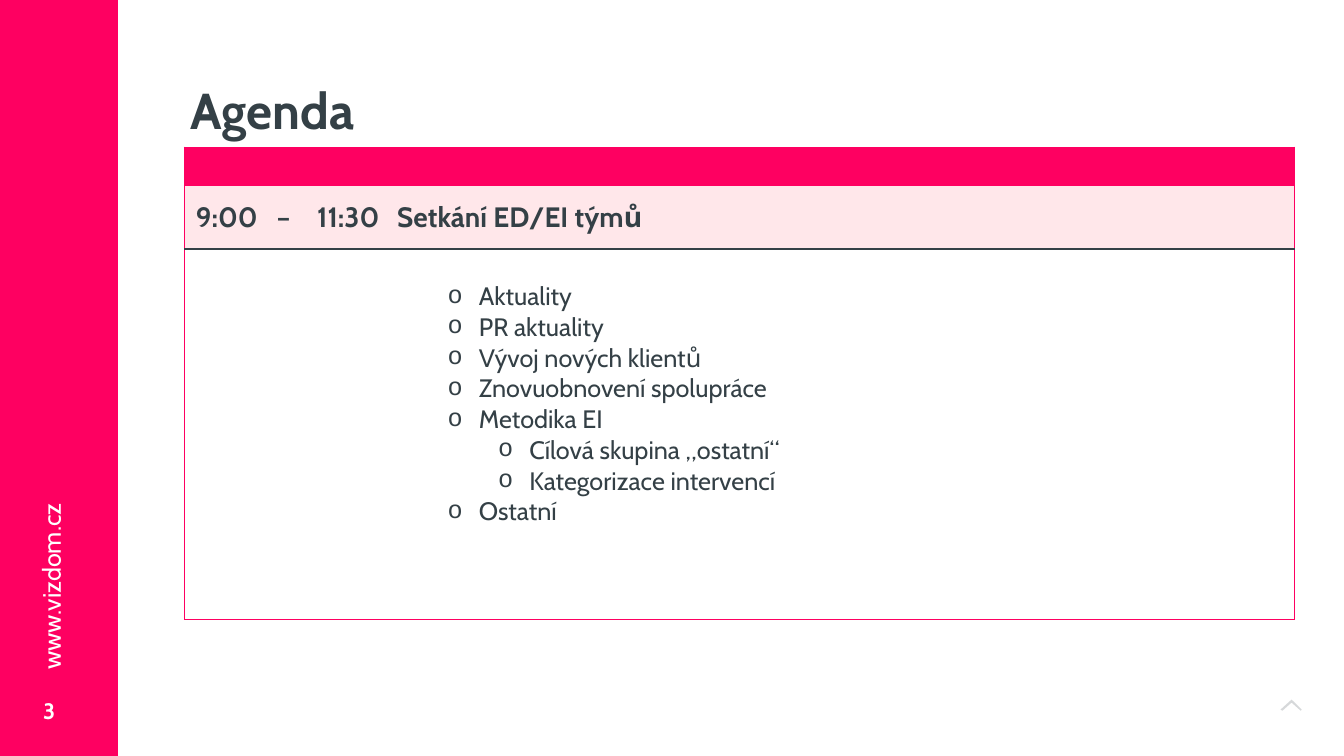
import pptx
import pptx.dml.color
import pptx.enum.shapes
import pptx.enum.text
import pptx.oxml
import pptx.oxml.ns
import pptx.util

FONT = "Cabin"
PINK, PALE, DARK, WHITE = "FE0061", "FFE7EA", "344046", "FFFFFF"

TITLE = "Agenda"
WEBSITE = "www.vizdom.cz"
PAGE_NUMBER = "3"
SESSION = ["9:00", "– ", "11:30", "Setkání ED/EI týmů"]
TOPICS = [
    (1, "Aktuality"),
    (1, "PR aktuality"),
    (1, "Vývoj nových klientů"),
    (1, "Znovuobnovení spolupráce"),
    (1, "Metodika EI"),
    (2, "Cílová skupina „ostatní“"),
    (2, "Kategorizace intervencí"),
    (1, "Ostatní"),
]

# Lengths in px, 100 to the inch
PAGE_SIZE = (1333, 750)
BAR = (0, 0, 117, 750)
NUMBER_BOX = (33, 675, 50, 60)
WEBSITE_BOX = (-68, 535, 238, 41)
TITLE_BOX = (189, 78, 311, 68)
TABLE_AT = (183, 146)
COLUMNS = [84, 35, 87, 895]
ROWS = [38, 63, 368]
ROW_FILLS = [PINK, PALE, WHITE]
ROW_LINES = [PINK, PINK, DARK, PINK]
CHEVRON = [(1281, 694), (1291, 704), (1290, 705), (1281, 697), (1272, 705), (1270, 704)]
HANGING = 31
LEVEL_INDENT = {1: 81, 2: 131}
SPACE_BELOW_TOPICS = 60


def px(length):
    return pptx.util.Emu(length * 9144)


def place(box):
    return [px(length) for length in box]


def colour(hex_string):
    return pptx.dml.color.RGBColor.from_string(hex_string)


def xml(tag, attributes="", content=""):
    namespace = pptx.oxml.ns.nsdecls("a")
    return pptx.oxml.parse_xml(f"<a:{tag} {namespace} {attributes}>{content}</a:{tag}>")


def write(para, text, size, hex_string, bold=False):
    para.text = text
    para.font.name = FONT
    para.font.size = pptx.util.Pt(size)
    para.font.bold = bold
    para.font.color.rgb = colour(hex_string)


def paint(shape, hex_string):
    shape.shadow.inherit = False
    shape.fill.solid()
    shape.fill.fore_color.rgb = colour(hex_string)
    shape.line.fill.background()


def add_side_bar(page):
    bar = page.shapes.add_shape(pptx.enum.shapes.MSO_SHAPE.RECTANGLE, *place(BAR))
    paint(bar, PINK)

    number = page.shapes.add_textbox(*place(NUMBER_BOX))
    number.text_frame.word_wrap = True
    number.text_frame.vertical_anchor = pptx.enum.text.MSO_ANCHOR.MIDDLE
    write(number.text_frame.paragraphs[0], PAGE_NUMBER, 16, WHITE, bold=True)

    website = page.shapes.add_textbox(*place(WEBSITE_BOX))
    website.rotation = 270
    website.text_frame.word_wrap = True
    write(website.text_frame.paragraphs[0], WEBSITE, 18, WHITE)


def add_chevron(page):
    builder = page.shapes.build_freeform(*CHEVRON[0], scale=px(1))
    builder.add_line_segments(CHEVRON[1:], close=True)
    chevron = builder.convert_to_shape()
    paint(chevron, DARK)
    fill_colour = chevron.fill._xPr.find(".//" + pptx.oxml.ns.qn("a:srgbClr"))
    fill_colour.append(xml("alpha", 'val="20000"'))


def set_title(page):
    title = page.shapes.title
    title.left, title.top, title.width, title.height = place(TITLE_BOX)
    frame = title.text_frame
    frame.margin_left = frame.margin_right = 0
    frame.vertical_anchor = pptx.enum.text.MSO_ANCHOR.MIDDLE
    para = frame.paragraphs[0]
    write(para, TITLE, 36, DARK, bold=True)
    para.alignment = pptx.enum.text.PP_ALIGN.LEFT
    para.line_spacing = 0.9


def set_borders(cell, lines):
    """Draw the borders in lines, side to colour; None hides a side."""
    properties = cell._tc.get_or_add_tcPr()
    for side, hex_string in lines.items():
        if hex_string:
            content = f'<a:solidFill><a:srgbClr val="{hex_string}"/></a:solidFill>'
        else:
            content = "<a:noFill/>"
        properties.append(xml("ln" + side, 'w="12700"', content))


def add_topics(cell):
    frame = cell.text_frame
    for index, (level, topic) in enumerate(TOPICS):
        para = frame.add_paragraph() if index else frame.paragraphs[0]
        para.level = level
        properties = para._p.get_or_add_pPr()
        properties.set("marL", str(px(LEVEL_INDENT[level])))
        properties.set("indent", str(px(-HANGING)))
        properties.append(xml("buFont", 'typeface="Courier New"'))
        properties.append(xml("buChar", 'char="o"'))
        write(para, topic, 18, DARK)
    cell.margin_bottom = px(SPACE_BELOW_TOPICS)


def add_agenda(page):
    size = (sum(COLUMNS), sum(ROWS))
    table = page.shapes.add_table(len(ROWS), len(COLUMNS), *place(TABLE_AT + size)).table
    for column, width in zip(table.columns, COLUMNS):
        column.width = px(width)
    last = len(COLUMNS) - 1
    for row_index, height in enumerate(ROWS):
        table.rows[row_index].height = px(height)
        for column_index in range(len(COLUMNS)):
            cell = table.cell(row_index, column_index)
            set_borders(cell, {
                "L": PINK if column_index == 0 else None,
                "R": PINK if column_index == last else None,
                "T": ROW_LINES[row_index],
                "B": ROW_LINES[row_index + 1],
            })
            cell.fill.solid()
            cell.fill.fore_color.rgb = colour(ROW_FILLS[row_index])
            cell.margin_left = cell.margin_right = px(5)
            cell.margin_top = cell.margin_bottom = 0
            cell.vertical_anchor = pptx.enum.text.MSO_ANCHOR.MIDDLE

    for column_index, text in enumerate(SESSION):
        para = table.cell(1, column_index).text_frame.paragraphs[0]
        write(para, text, 20, DARK, bold=True)
        if column_index < last:
            para.alignment = pptx.enum.text.PP_ALIGN.CENTER
    add_topics(table.cell(2, last))


def main():
    deck = pptx.Presentation()
    deck.slide_width, deck.slide_height = place(PAGE_SIZE)
    page = deck.slides.add_slide(deck.slide_layouts[5])
    add_chevron(page)
    add_side_bar(page)
    set_title(page)
    add_agenda(page)
    deck.save("out.pptx")


if __name__ == "__main__":
    main()
